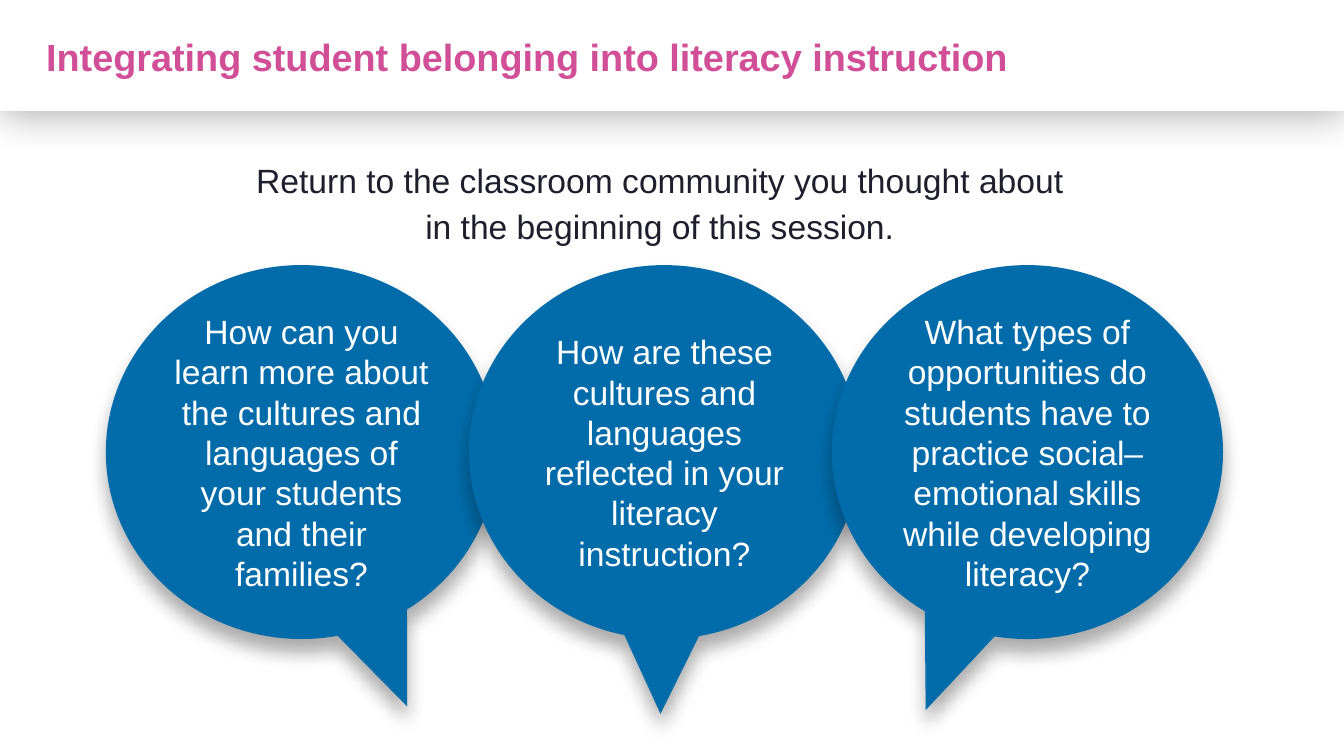
from lxml.etree import SubElement
from pptx import Presentation
from pptx.dml.color import RGBColor
from pptx.enum.shapes import MSO_SHAPE
from pptx.enum.text import MSO_ANCHOR, PP_ALIGN
from pptx.oxml.ns import qn
from pptx.util import Inches, Pt

COLORS = {"white": "FFFFFF", "pink": "D14F97", "ink": "1E1E2D",
          "blue": "026CAA", "black": "000000"}

TITLE = {"size": Pt(27), "bold": True}
BODY = {"size": Pt(24), "bold": False}

# Question and pointer tip of each bubble
BUBBLES = [
    ("How can you learn more about the cultures and languages of "
     "your students and their families?", (0.27, 0.68)),
    ("How are these cultures and languages reflected in your "
     "literacy instruction?", (-0.01, 0.7)),
    ("What types of opportunities do students have to practice "
     "social–emotional skills while developing literacy?", (-0.26, 0.69)),
]


def rgb(name):
    return RGBColor.from_string(COLORS[name])


def add_shadow(shape, alpha, blur, dist):
    """Cast a soft black shadow straight down."""
    shape.shadow.inherit = False
    effects = shape._element.spPr.find(qn("a:effectLst"))
    outer = SubElement(effects, qn("a:outerShdw"), blurRad=str(Pt(blur)),
                       dist=str(Pt(dist)), dir="5400000", algn="t",
                       rotWithShape="0")
    color = SubElement(outer, qn("a:srgbClr"), val=COLORS["black"])
    SubElement(color, qn("a:alpha"), val=str(alpha * 1000))


def add_form(slide, kind, box, fill, shadow):
    shape = slide.shapes.add_shape(kind, *map(Inches, box))
    shape.fill.solid()
    shape.fill.fore_color.rgb = rgb(fill)
    shape.line.fill.background()
    add_shadow(shape, *shadow)
    return shape


def set_text(shape, text, style, color, anchor, layout):
    frame = shape.text_frame
    frame.word_wrap = True
    frame.vertical_anchor = anchor
    para = frame.paragraphs[0]
    para.text = text
    for key, value in layout.items():
        setattr(para, key, value)
    for run in para.runs:
        run.font.name = "Arial"
        run.font.color.rgb = rgb(color)
        for key, value in style.items():
            setattr(run.font, key, value)


def add_text(slide, box, *args):
    set_text(slide.shapes.add_textbox(*map(Inches, box)), *args)


def add_bubble(slide, left, text, tip):
    shape = add_form(slide, MSO_SHAPE.OVAL_CALLOUT, (left, 2.63, 3.88, 3.71),
                     "blue", (32, 13, 10))
    for index, value in enumerate(tip):
        shape.adjustments[index] = value
    set_text(shape, text, BODY, "white", MSO_ANCHOR.MIDDLE,
             {"alignment": PP_ALIGN.CENTER, "space_after": Pt(18)})


def main():
    deck = Presentation()
    deck.slide_width, deck.slide_height = Inches(13.33), Inches(7.5)
    slide = deck.slides.add_slide(deck.slide_layouts[6])

    # Header band and title
    add_form(slide, MSO_SHAPE.RECTANGLE, (0, 0, 13.33, 1.1), "white",
             (30, 28, 3))
    add_text(slide, (0.36, 0.27, 12.43, 0.57),
             "Integrating student belonging into literacy instruction",
             TITLE, "pink", MSO_ANCHOR.MIDDLE, {"alignment": PP_ALIGN.LEFT})

    # Prompt
    add_text(slide, (0.36, 1.48, 12.46, 2.33),
             "Return to the classroom community you thought about \n"
             "in the beginning of this session. ",
             BODY, "ink", MSO_ANCHOR.TOP,
             {"alignment": PP_ALIGN.CENTER, "line_spacing": 1.14,
              "space_after": Pt(6)})

    # Question bubbles
    for index, (text, tip) in enumerate(BUBBLES):
        add_bubble(slide, 1.05 + 3.6 * index, text, tip)

    deck.save("out.pptx")


if __name__ == "__main__":
    main()
